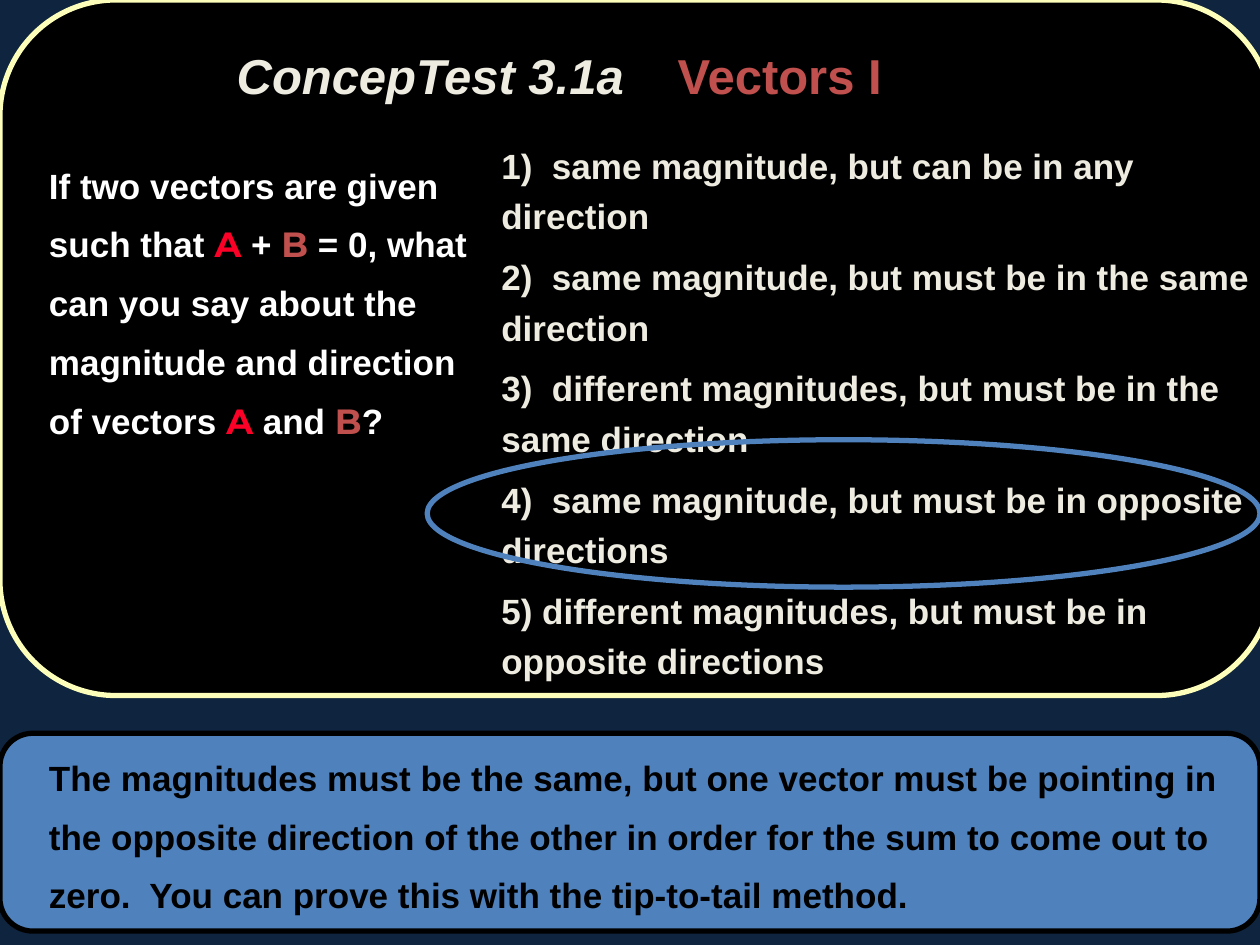
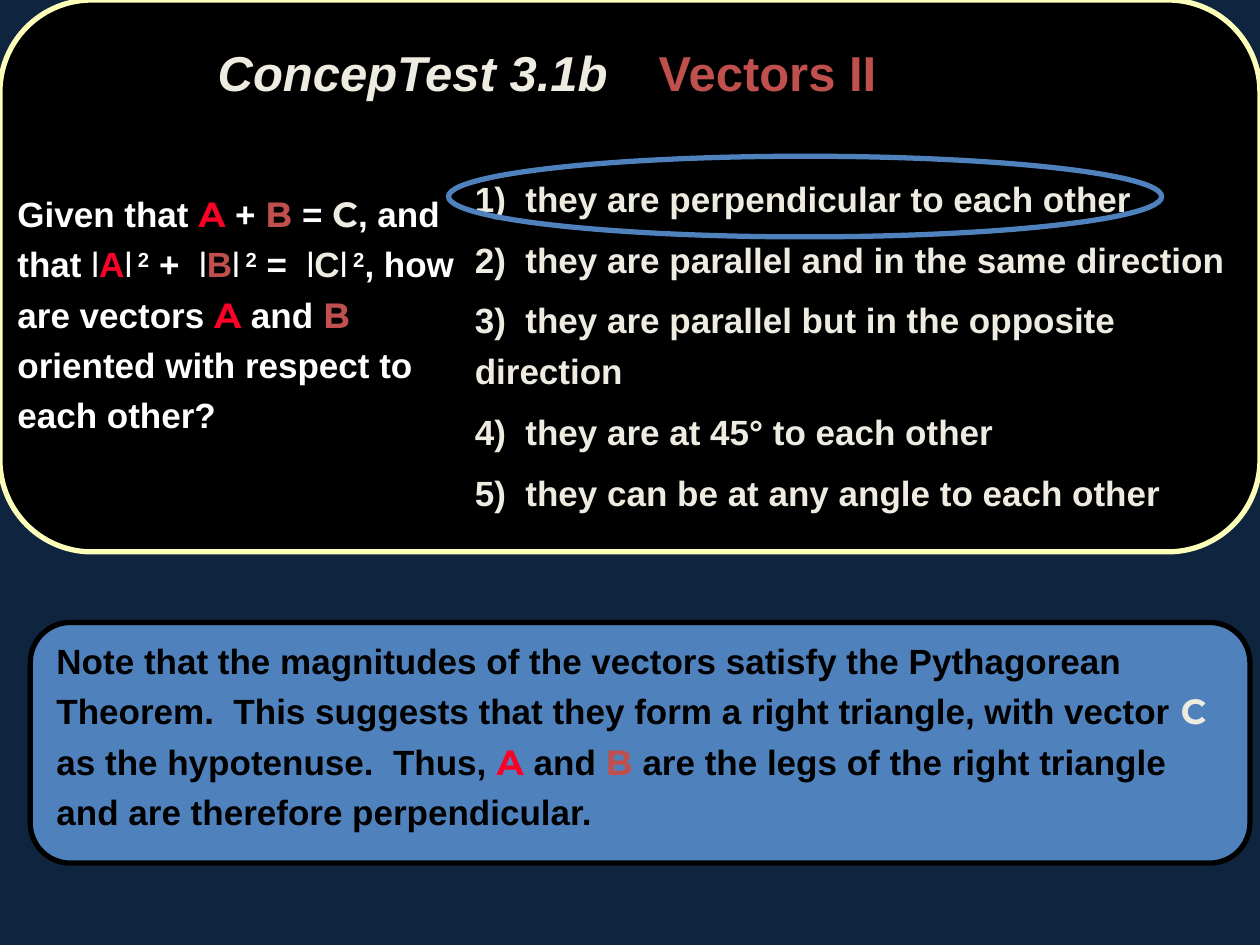
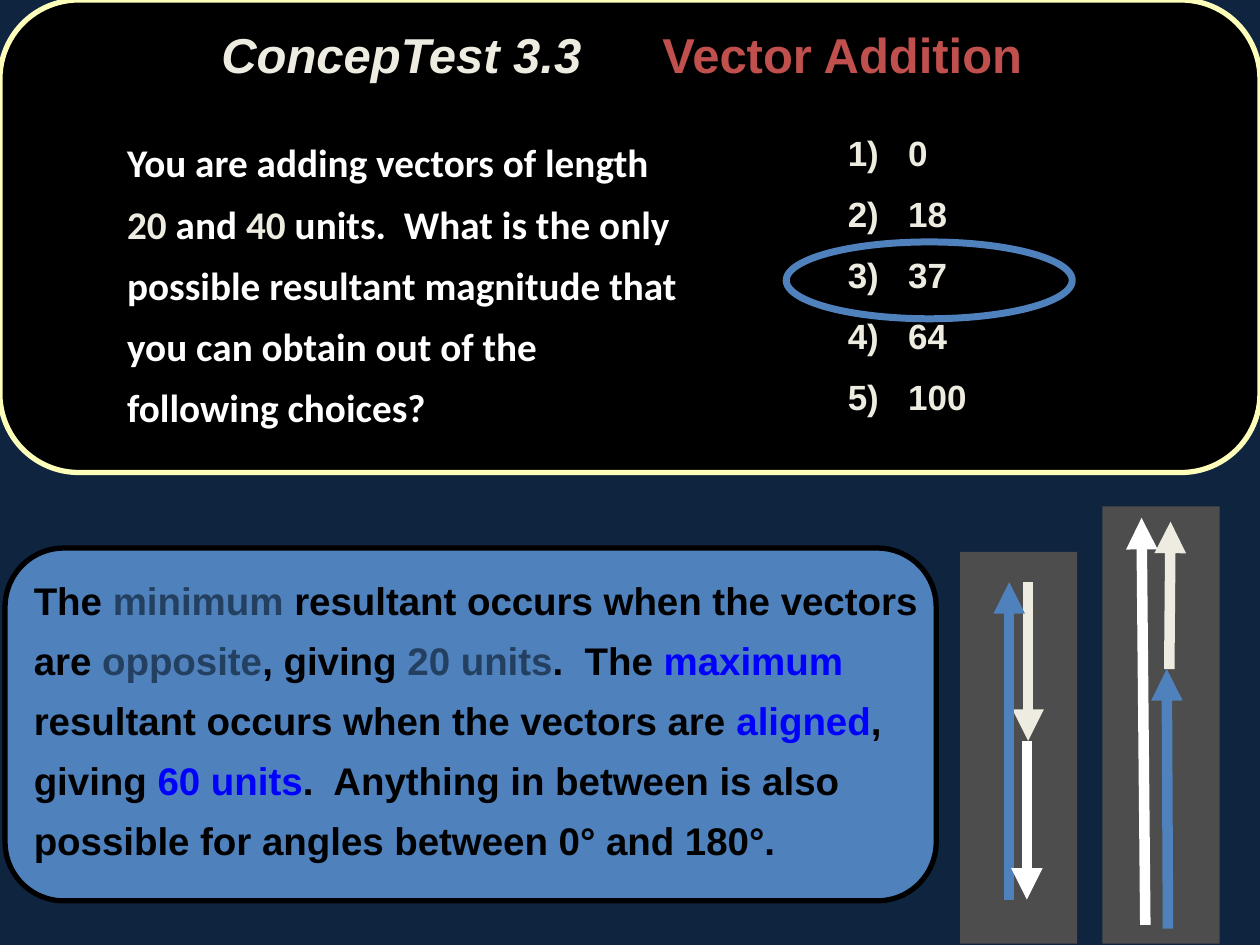
"""Builds three vector concept-test slides, each with a question, choices and explanation."""
import pptx
import pptx.dml.color
import pptx.enum.shapes
import pptx.enum.text
import pptx.oxml.ns
import pptx.oxml.xmlchemy
import pptx.util

Inches = pptx.util.Inches
SHAPE = pptx.enum.shapes.MSO_SHAPE

NAVY, BLACK, WHITE, CREAM = "0F243E", "000000", "FFFFFF", "EEECE1"
BLUE, RED, BRICK, YELLOW = "4F81BD", "FC0128", "C0504D", "FCFEB9"
SLATE, PURE_BLUE, GREY = "244061", "0000FF", "4D4D4D"
INDENT = 0.44

VEC_A = {"font": "Montserrat", "color": RED}
VEC_B = {"font": "Montserrat", "color": BRICK}
VEC_C = {"font": "Montserrat", "color": CREAM}
BAR = {"bold": False}
SQUARE = {"baseline": 30}
PALE = {"color": CREAM}
LOW = {"color": SLATE}
HIGH = {"color": PURE_BLUE}

SLIDES = [
    {
        "panel": (0, 0, 10.1, 5.52),
        "note_box": (0, 5.82, 10, 1.57),
        "title": ("ConcepTest 3.1a\t", "Vectors I"),
        "title_at": (1.78, 0.31, 6.78, 0.57),
        "title_format": {"before": 14},
        "question": [
            "If two vectors are given such that ", ("A", VEC_A), " + ", ("B", VEC_B),
            " = 0, what can you say about the magnitude and direction of vectors ",
            ("A", VEC_A), " and ", ("B", VEC_B), "?"],
        "question_at": (-0.15, 1.12, 4.07, 3.02),
        "question_format": {"spacing": 1.4},
        "choices": [
            "1)  same magnitude, but can be in any direction",
            "2)  same magnitude, but must be in the same direction",
            "3)  different magnitudes, but must be in the same direction",
            "4)  same magnitude, but must be in opposite directions",
            "5) different magnitudes, but must be in opposite directions"],
        "choices_at": (3.44, 1.03, 6.75, 4.97),
        "choices_format": {},
        "note": [
            "The magnitudes must be the same, but one vector must be pointing in the "
            "opposite direction of the other in order for the sum to come out to zero.  "
            "You can prove this with the tip-to-tail method."],
        "note_at": (-0.15, 5.82, 10, 1.59),
        "note_format": {"spacing": 1.4},
        "answer_at": (3.39, 3.49, 6.61, 1.17),
        "answer_width": 3,
    },
    {
        "panel": (0, 0, 10, 4.38),
        "note_box": (0.24, 4.94, 9.68, 1.91),
        "title": ("ConcepTest 3.1b\t", "Vectors II"),
        "title_at": (1.63, 0.29, 7.27, 0.57),
        "title_format": {"before": 14},
        "question": [
            "Given that ", ("A", VEC_A), " + ", ("B", VEC_B), " = ", ("C", VEC_C),
            ", and that ", ("l", BAR), ("A", {"color": RED}), ("l", BAR), (" 2", SQUARE),
            " +  ", ("l", BAR), ("B", {"color": BRICK}), ("l", BAR), (" 2", SQUARE),
            " =  ", ("l", BAR), ("C", PALE), ("l", BAR), (" 2", SQUARE),
            ", how are vectors ", ("A", VEC_A), " and ", ("B", VEC_B),
            " oriented with respect to each other?"],
        "question_at": (-0.4, 1.41, 4.13, 2.92),
        "question_format": {},
        "choices": [
            "1)  they are perpendicular to each other",
            "2)  they are parallel and in the same direction",
            "3)  they are parallel but in the opposite direction",
            "4)  they are at 45° to each other",
            "5)  they can be at any angle to each other"],
        "choices_at": (3.23, 1.29, 6.77, 2.79),
        "choices_format": {},
        "note": [
            "Note that the magnitudes of the vectors satisfy the Pythagorean Theorem.  "
            "This suggests that they form a right triangle, with vector ", ("C ", VEC_C),
            "as the hypotenuse.  Thus, ", ("A ", VEC_A), "and ", ("B ", VEC_B),
            "are the legs of the right triangle and are therefore perpendicular."],
        "note_at": (-0.09, 4.96, 10, 1.59),
        "note_format": {},
        "answer_at": (3.56, 1.24, 5.66, 0.64),
        "answer_width": 3,
    },
    {
        "panel": (0, 0, 10, 3.75),
        "note_box": (0.04, 4.35, 7.39, 2.8),
        "title": ("ConcepTest 3.3\t\t", "Vector Addition"),
        "title_at": (1.02, 0, 7.83, 0.92),
        "title_format": {"spacing": 0.9, "align": "CENTER", "anchor": "MIDDLE"},
        "question": [
            "You are adding vectors of length ", ("20", PALE), " and ", ("40", PALE),
            " units.  What is the only possible resultant magnitude that you can "
            "obtain out of the following choices?"],
        "question_at": (0.47, 0.94, 5.11, 2.62),
        "question_format": {"font": "Calibri", "size": 22.4, "spacing": 1.3, "before": 4.5},
        "choices": ["1)\t0", "2)\t18", "3)\t37", "4)\t64", "5)\t100"],
        "choices_at": (6.63, 0.93, 2.28, 2.73),
        "choices_format": {"left": 0.48, "first": -0.48},
        "note": [
            "The ", ("minimum", LOW), " resultant occurs when the vectors are ",
            ("opposite", LOW), ", giving ", ("20 units", LOW), ".  The ",
            ("maximum", HIGH), " resultant occurs when the vectors are ",
            ("aligned", HIGH), ", giving ", ("60 units", HIGH),
            ".  Anything in between is also possible for angles between 0° and 180°."],
        "note_at": (-0.27, 4.42, 7.7, 3.14),
        "note_format": {"size": 22, "spacing": 1.3, "before": 6.6},
        "answer_at": (6.24, 1.92, 2.27, 0.61),
        "answer_width": 4,
        "diagrams": [
            ((8.75, 4.02, 0.93, 3.47), [
                ((9.27, 7.37), (9.26, 5.31), BLUE),
                ((9.28, 5.31), (9.29, 4.14), CREAM),
                ((9.09, 7.34), (9.06, 4.11), WHITE)]),
            ((7.62, 4.38, 0.93, 3.11), [
                ((8.16, 4.62), (8.16, 5.88), CREAM),
                ((8.01, 7.14), (8.01, 4.62), BLUE),
                ((8.15, 5.88), (8.15, 7.14), WHITE)]),
        ],
    },
]


def rgb(color):
    return pptx.dml.color.RGBColor.from_string(color)


def add_box(shapes, kind, at, fill=None, line=None, width=3):
    sp = shapes.add_shape(kind, *map(Inches, at))
    sp.shadow.inherit = False
    if fill:
        sp.fill.solid()
        sp.fill.fore_color.rgb = rgb(fill)
    else:
        sp.fill.background()
    if line:
        sp.line.color.rgb = rgb(line)
        sp.line.width = pptx.util.Pt(width)
    else:
        sp.line.fill.background()


def add_arrow(shapes, start, end, color):
    line = shapes.add_connector(
        pptx.enum.shapes.MSO_CONNECTOR.STRAIGHT, *map(Inches, start + end))
    line.line.color.rgb = rgb(color)
    line.line.width = pptx.util.Pt(6)
    spPr = line._element.spPr
    ln = spPr.find(pptx.oxml.ns.qn("a:ln"))
    tail = pptx.oxml.xmlchemy.OxmlElement("a:tailEnd")
    tail.set("type", "triangle")
    ln.append(tail)
    spPr.append(pptx.oxml.xmlchemy.OxmlElement("a:effectLst"))


def add_run(p, text, font="Arial", size=20, color=WHITE, bold=True, italic=False, baseline=0):
    r = p.add_run()
    r.text = text
    r.font.name = font
    r.font.size = pptx.util.Pt(size)
    r.font.color.rgb = rgb(color)
    r.font.bold = bold
    r.font.italic = italic
    if baseline:
        r._r.get_or_add_rPr().set("baseline", str(baseline * 1000))


def add_text(s, paragraphs, at, spacing=1.2, before=6, left=INDENT, first=0,
             align="LEFT", anchor="TOP", **font):
    tf = s.shapes.add_textbox(*map(Inches, at)).text_frame
    tf.word_wrap = True
    tf.vertical_anchor = getattr(pptx.enum.text.MSO_ANCHOR, anchor)
    for i, runs in enumerate(paragraphs):
        p = tf.add_paragraph() if i else tf.paragraphs[0]
        p.alignment = getattr(pptx.enum.text.PP_ALIGN, align)
        p.line_spacing = spacing
        p.space_before = pptx.util.Pt(before)
        pPr = p._p.get_or_add_pPr()
        pPr.set("marL", str(Inches(left)))
        pPr.set("indent", str(Inches(first)))
        for run in runs:
            text, change = (run, {}) if isinstance(run, str) else run
            add_run(p, text, **{**font, **change})


def add_title(s, title, at, **layout):
    name, topic = title
    runs = [(name, {"color": CREAM, "italic": True}), (topic, {"color": BRICK})]
    add_text(s, [runs], at, **{"spacing": 1.0, "before": 0, "left": 0, "size": 28, **layout})


def add_diagram(s, panel, arrows):
    group = s.shapes.add_group_shape()
    add_box(group.shapes, SHAPE.RECTANGLE, panel, fill=GREY)
    for start, end, color in arrows:
        add_arrow(group.shapes, start, end, color)


def add_slide(prs, c):
    s = prs.slides.add_slide(prs.slide_layouts[6])
    s.background.fill.solid()
    s.background.fill.fore_color.rgb = rgb(NAVY)
    add_box(s.shapes, SHAPE.ROUNDED_RECTANGLE, c["note_box"], BLUE, BLACK)
    add_box(s.shapes, SHAPE.ROUNDED_RECTANGLE, c["panel"], BLACK, YELLOW)
    add_text(s, [c["question"]], c["question_at"], **c["question_format"])
    add_text(s, [[choice] for choice in c["choices"]], c["choices_at"],
             color=CREAM, **c["choices_format"])
    add_text(s, [c["note"]], c["note_at"], color=BLACK, **c["note_format"])
    for panel, arrows in c.get("diagrams", []):
        add_diagram(s, panel, arrows)
    add_box(s.shapes, SHAPE.OVAL, c["answer_at"], line=BLUE, width=c["answer_width"])
    add_title(s, c["title"], c["title_at"], **c["title_format"])


def main():
    prs = pptx.Presentation()
    prs.slide_width, prs.slide_height = Inches(10), Inches(7.5)
    for content in SLIDES:
        add_slide(prs, content)
    prs.save("out.pptx")


if __name__ == "__main__":
    main()
